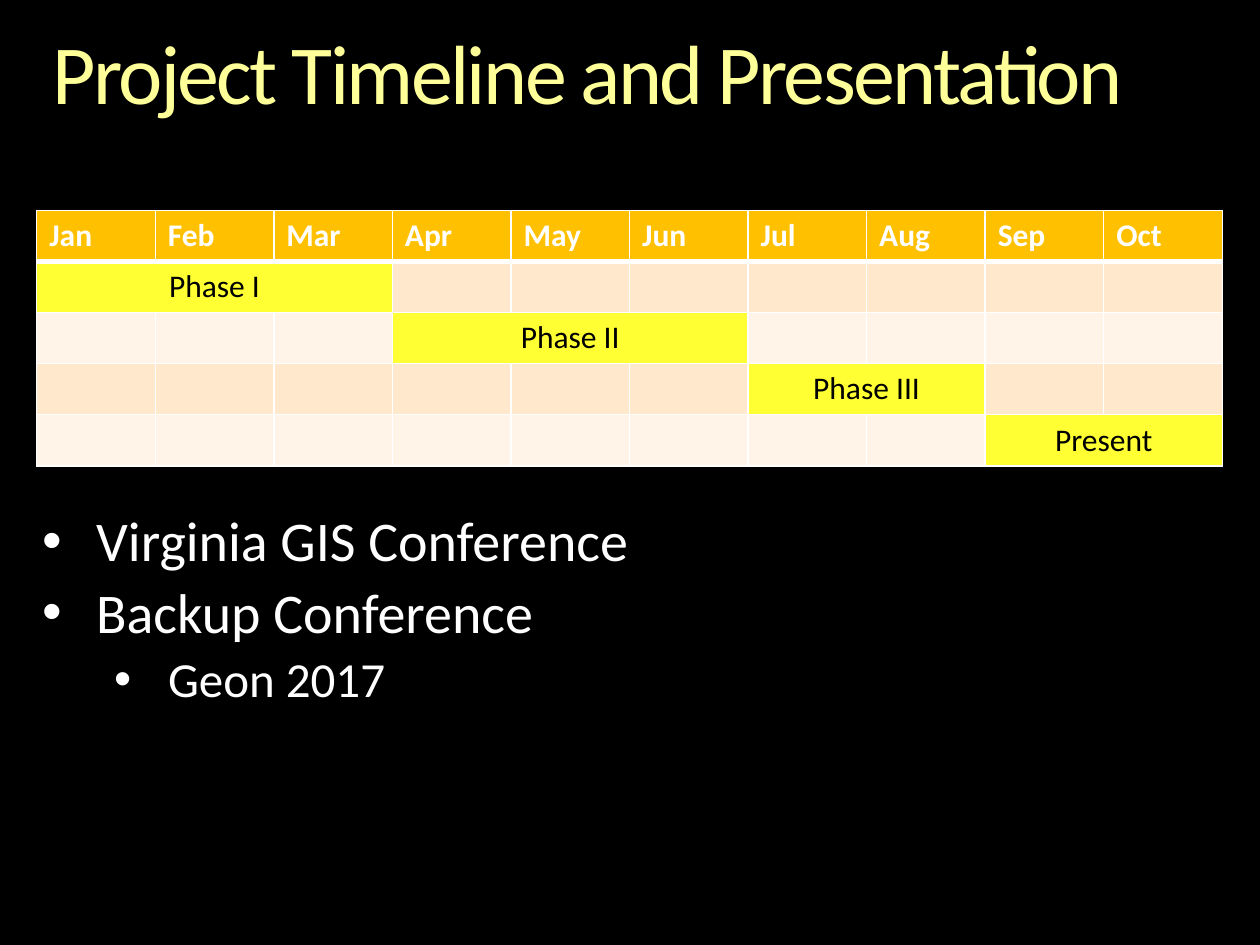
from lxml.etree import SubElement
from pptx import Presentation
from pptx.dml.color import RGBColor
from pptx.enum.text import PP_ALIGN as Align
from pptx.oxml.ns import qn
from pptx.util import Cm, Pt

COLORS = {
    "background": "000000",
    "title": "FFFF99",
    "white": "FFFFFF",
    "black": "000000",
    "header": "FFC000",
    "phase": "FFFF33",
    "odd": "FFE8CC",
    "even": "FFF4E7",
}
MONTHS = ["Jan", "Feb", "Mar", "Apr", "May", "Jun", "Jul", "Aug", "Sep", "Oct"]
PHASES = [("Phase I", 0, 3), ("Phase II", 3, 3), ("Phase III", 6, 2), ("Present", 8, 2)]
BULLETS = [("Virginia GIS Conference", 0), ("Backup Conference", 0), ("Geon 2017", 1)]
LEVELS = [{"size": 32, "margin": Cm(1.09)}, {"size": 28, "margin": Cm(2.54)}]
HANGING = Cm(1.09)


def color(name):
    """Return the palette colour with this name."""
    return RGBColor.from_string(COLORS[name])


def write(para, text, size=18, tint="white", bold=False, align=None, spacing=None):
    """Add formatted text to a paragraph."""
    span = para.add_run()
    span.text = text
    font = span.font
    font.name, font.size, font.bold = "Calibri", Pt(size), bold
    font.color.rgb = color(tint)
    if align is not None:
        para.alignment = align
    if spacing is not None:
        font._element.set("spc", str(int(spacing * 100)))


def add_box(page, left, top, width, height):
    """Add a wrapping text box without insets and return its frame."""
    frame = page.shapes.add_textbox(left, top, width, height).text_frame
    frame.word_wrap = True
    frame.margin_left = frame.margin_right = frame.margin_top = frame.margin_bottom = 0
    return frame


def add_title(page, text):
    """Add the slide title."""
    para = add_box(page, Cm(1.06), Cm(0.64), Cm(23.28), Cm(1.85)).paragraphs[0]
    para.line_spacing = 0.9
    write(para, text, size=48, tint="title", spacing=-1.5)


def add_bullets(page, items):
    """Add the bulleted list of conferences."""
    frame = add_box(page, Cm(0.85), Cm(10.34), Cm(23.28), Cm(4.06))
    for index, (text, level) in enumerate(items):
        para = frame.add_paragraph() if index else frame.paragraphs[0]
        style = LEVELS[level]
        para.level = level
        properties = para._p.get_or_add_pPr()
        properties.set("marL", str(style["margin"]))
        properties.set("indent", str(-HANGING))
        SubElement(properties, qn("a:buFont"), typeface="Arial")
        SubElement(properties, qn("a:buChar"), char="•")
        para.line_spacing = 0.9
        if index:
            para.space_before = Pt(style["size"] * 0.2)
        write(para, text, size=style["size"])


def style_cell(cell, fill, widths):
    """Give a cell white borders, in points by side, and a fill."""
    properties = cell._tc.get_or_add_tcPr()
    for side, width in widths.items():
        line = SubElement(properties, qn(f"a:ln{side}"), w=str(Pt(width)))
        paint = SubElement(line, qn("a:solidFill"))
        SubElement(paint, qn("a:srgbClr"), val=COLORS["white"])
    cell.fill.solid()
    cell.fill.fore_color.rgb = color(fill)


def add_timeline(page, months, phases):
    """Add the month table with one merged bar for each phase."""
    column_width, row_height = Cm(2.39), Cm(1.03)
    rows, columns = len(phases) + 1, len(months)
    table = page.shapes.add_table(rows, columns, Cm(0.74), Cm(4.24),
                                  column_width * columns, row_height * rows).table
    for column in table.columns:
        column.width = column_width
    for row in table.rows:
        row.height = row_height
    for index, month in enumerate(months):
        cell = table.cell(0, index)
        style_cell(cell, "header", {"L": 1, "R": 1, "T": 1, "B": 3})
        write(cell.text_frame.paragraphs[0], month, bold=True)
    for row, (name, start, length) in enumerate(phases, 1):
        for index in range(columns):
            band = "odd" if row % 2 else "even"
            fill = "phase" if start <= index < start + length else band
            top = 3 if row == 1 else 1
            style_cell(table.cell(row, index), fill, {"L": 1, "R": 1, "T": top, "B": 1})
        bar = table.cell(row, start)
        bar.merge(table.cell(row, start + length - 1))
        write(bar.text_frame.paragraphs[0], name, tint="black", align=Align.CENTER)


def main():
    """Build and save the deck."""
    deck = Presentation()
    deck.slide_width, deck.slide_height = Cm(25.4), Cm(19.05)
    page = deck.slides.add_slide(deck.slide_layouts[6])
    page.background.fill.solid()
    page.background.fill.fore_color.rgb = color("background")
    add_title(page, "Project Timeline and Presentation")
    add_timeline(page, MONTHS, PHASES)
    add_bullets(page, BULLETS)
    deck.save("out.pptx")


if __name__ == "__main__":
    main()
